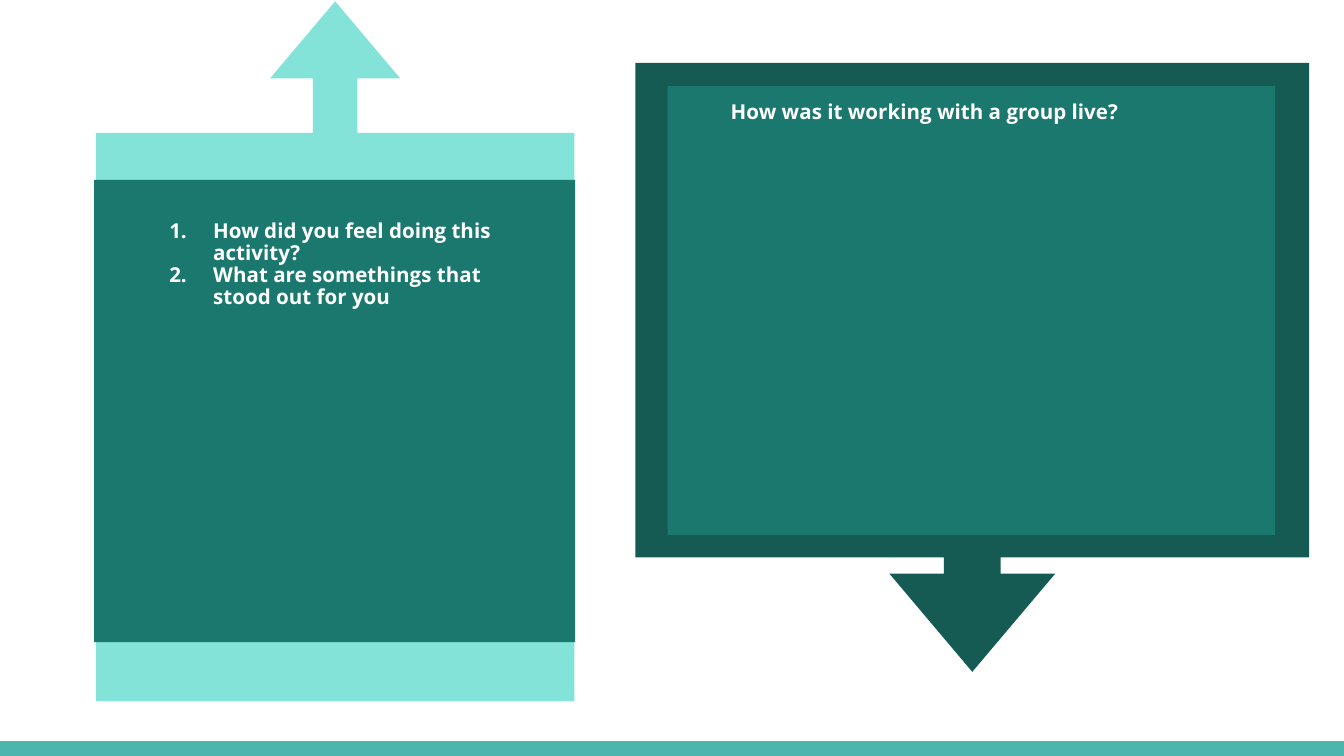
"""Build a reflection slide with two callout panels of questions."""
from dataclasses import dataclass

from lxml import etree
from pptx import Presentation
from pptx.dml.color import RGBColor
from pptx.enum.shapes import MSO_SHAPE
from pptx.oxml.ns import qn
from pptx.shapes.autoshape import Shape
from pptx.util import Cm, Pt

RECTANGLE = MSO_SHAPE.RECTANGLE
CALLOUT = MSO_SHAPE.RIGHT_ARROW_CALLOUT
PANEL = MSO_SHAPE.SNIP_1_RECTANGLE


@dataclass(frozen=True)
class Theme:
    bar: str = "4DB6AC"
    light: str = "83E3D9"
    panel: str = "1B786E"
    dark: str = "155B54"
    text: str = "FFFFFF"
    font: str = "Open Sans"
    size: float = 11
    line_spacing: float = 0.88
    inset: float = 0.25


@dataclass(frozen=True)
class Box:
    left: float
    top: float
    width: float
    height: float

    def lengths(self) -> tuple[Cm, Cm, Cm, Cm]:
        return Cm(self.left), Cm(self.top), Cm(self.width), Cm(self.height)


@dataclass(frozen=True)
class QuestionCard:
    callout: Box
    rotation: int
    fill: str
    panel: Box
    text: Box
    questions: tuple[str, ...]
    space_after: float = 0
    numbered: bool = False


THEME = Theme()
WIDTH, HEIGHT, BAR_HEIGHT = 25.4, 14.29, 0.28
CALLOUT_ADJUSTMENTS = (0.093, 0.136, 0.161, 0.812)
CARDS = (
    QuestionCard(
        Box(-0.28, 2.12, 13.23, 9.04), 270, THEME.light,
        Box(1.78, 3.4, 9.09, 8.74), Box(2.51, 3.94, 7.62, 5.84),
        ("How did you feel doing this activity?",
         "What are somethings that stood out for you"),
        numbered=True,
    ),
    QuestionCard(
        Box(12.62, 0.58, 11.51, 12.73), 90, THEME.dark,
        Box(12.62, 1.63, 11.48, 8.48), Box(13.56, 1.73, 9.63, 8.48),
        ("How was it working with a group live?",),
        space_after=12,
    ),
)


def set_attributes(target: object, values: dict[str, object]) -> None:
    for name, value in values.items():
        setattr(target, name, value)


def draw_shape(shapes, kind: MSO_SHAPE, box: Box, fill: str,
               adjustments: tuple[float, ...] = (), rotation: int = 0) -> Shape:
    shape = shapes.add_shape(kind, *box.lengths())
    shape.shadow.inherit = False
    shape.fill.solid()
    shape.fill.fore_color.rgb = RGBColor.from_string(fill)
    shape.line.fill.background()
    shape.rotation = rotation
    for index, value in enumerate(adjustments):
        shape.adjustments[index] = value
    return shape


def number_paragraph(paragraph) -> None:
    properties = paragraph._p.get_or_add_pPr()
    properties.set("marL", str(Cm(1.27)))
    properties.set("indent", str(Cm(-0.83)))
    color = etree.SubElement(properties, qn("a:buClr"))
    etree.SubElement(color, qn("a:srgbClr"), val=THEME.text)
    etree.SubElement(properties, qn("a:buFont"), typeface=THEME.font)
    etree.SubElement(properties, qn("a:buAutoNum"), type="arabicPeriod")


def draw_questions(shapes, card: QuestionCard) -> None:
    frame = shapes.add_textbox(*card.text.lengths()).text_frame
    sides = ("left", "top", "right", "bottom")
    set_attributes(frame, {f"margin_{side}": Cm(THEME.inset) for side in sides})
    frame.word_wrap = True
    for index, question in enumerate(card.questions):
        paragraph = frame.add_paragraph() if index else frame.paragraphs[0]
        set_attributes(paragraph, {
            "line_spacing": THEME.line_spacing,
            "space_before": Pt(0),
            "space_after": Pt(card.space_after),
        })
        if card.numbered:
            number_paragraph(paragraph)
        run = paragraph.add_run()
        run.text = question
        set_attributes(run.font, {"name": THEME.font, "size": Pt(THEME.size), "bold": True})
        run.font.color.rgb = RGBColor.from_string(THEME.text)


def draw_card(slide, card: QuestionCard) -> None:
    shapes = slide.shapes.add_group_shape().shapes
    draw_shape(shapes, CALLOUT, card.callout, card.fill, CALLOUT_ADJUSTMENTS, card.rotation)
    draw_shape(shapes, PANEL, card.panel, THEME.panel, (0,))
    draw_questions(shapes, card)


def main() -> None:
    presentation = Presentation()
    set_attributes(presentation, {"slide_width": Cm(WIDTH), "slide_height": Cm(HEIGHT)})
    slide = presentation.slides.add_slide(presentation.slide_layouts[6])
    bar = Box(0, HEIGHT - BAR_HEIGHT, WIDTH, BAR_HEIGHT)
    draw_shape(slide.shapes, RECTANGLE, bar, THEME.bar)
    for card in CARDS:
        draw_card(slide, card)
    presentation.save("out.pptx")


if __name__ == "__main__":
    main()
